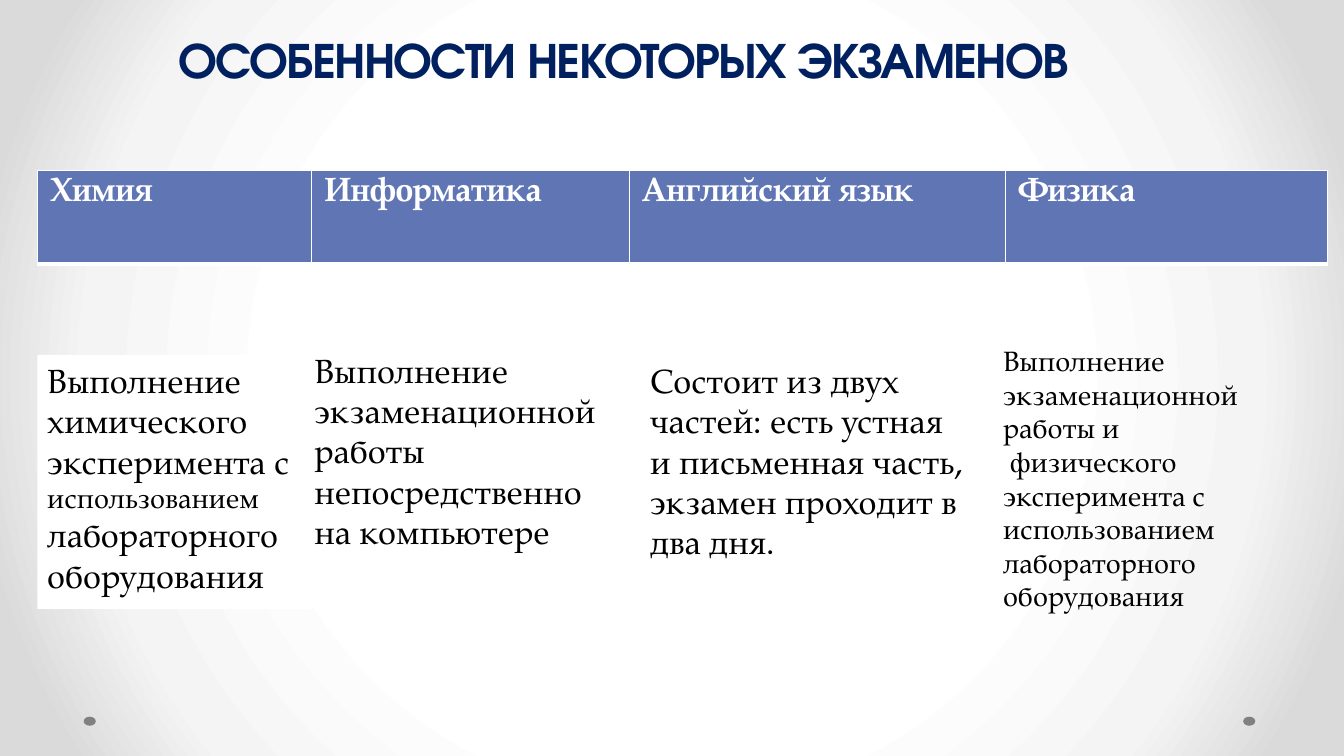
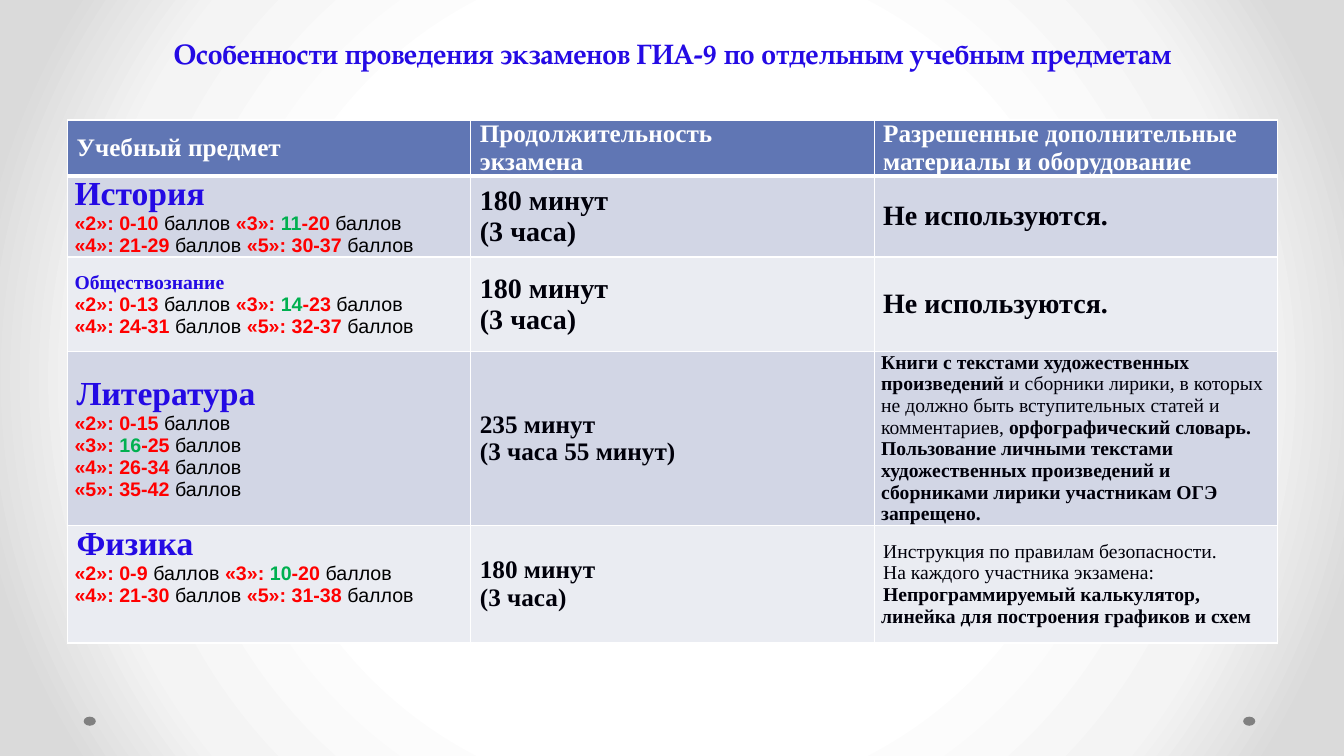
from lxml import etree
from pptx import Presentation
from pptx.dml.color import RGBColor
from pptx.enum.shapes import MSO_SHAPE
from pptx.enum.text import MSO_ANCHOR as ANCHOR, MSO_AUTO_SIZE as AUTO, PP_ALIGN as ALIGN
from pptx.oxml import parse_xml
from pptx.oxml.ns import qn
from pptx.util import Inches, Pt

A_NS = "http://schemas.openxmlformats.org/drawingml/2006/main"
PAGELLA, ADVENTOR = "TeX Gyre Pagella", "TeX Gyre Adventor"
TIMES, ARIAL = "Times New Roman", "Arial"
WHITE, BLACK, INK = "FFFFFF", "000000", "00000A"
NAVY, BLUE, RED, GREEN, GREY = "002060", "240AE4", "FF0000", "00B050", "808080"
HEADER, BANDS = "6076B4", ("D2D6E5", "EAECF2")
GRADIENT = ((50, "FFFFFF"), (76, "F4F4F4"), (92, "DADADA"))

EXAM_COLUMNS = (("Химия", 2.72), ("Информатика", 3.15), ("Английский язык", 3.73), ("Физика", 3.2))
HEADINGS = (
    ["Учебный предмет"],
    ["Продолжительность", "экзамена"],
    ["Разрешенные дополнительные", "материалы и оборудование"],
)
ROW_HEIGHTS = (0.55, 0.8, 0.94, 1.71, 1.17)
UNUSED = [[("Не используются.", 20, True)]]
BOOKS = [
    [("Книги с текстами художественных произведений ", 14, True),
     ("и сборники лирики, в которых не должно быть вступительных статей и комментариев, ", 14, False),
     ("орфографический словарь.", 14, True)],
    [("Пользование личными текстами художественных произведений и сборниками лирики "
      "участникам ОГЭ запрещено.", 14, True)],
]
TOOLS = [
    [("Инструкция по правилам безопасности.", 14, False)],
    [("На каждого участника экзамена:", 14, False)],
    [("Непрограммируемый калькулятор, линейка для построения графиков и схем", 14, True)],
]
SUBJECTS = (
    ("История", 24, ("0-10", "11-20", "21-29", "30-37"), 2, ("180 минут", "(3 часа)"), 20, UNUSED),
    ("Обществознание", 14, ("0-13", "14-23", "24-31", "32-37"), 2, ("180 минут", "(3 часа)"), 20, UNUSED),
    ("Литература", 24, ("0-15", "16-25", "26-34", "35-42"), 1, ("235 минут", "(3 часа 55 минут)"), 18, BOOKS),
    ("Физика", 24, ("0-9", "10-20", "21-30", "31-38"), 2, ("180 минут", "(3 часа)"), 18, TOOLS),
)


def rgb(color):
    return RGBColor.from_string(color)


def set_font(r, size, name, color, bold=False):
    r.font.size = Pt(size)
    r.font.name = name
    r.font.bold = bold
    r.font.color.rgb = rgb(color)


def write(tf, paragraphs, indent=0):
    for i, runs in enumerate(paragraphs):
        p = tf.paragraphs[0] if i == 0 else tf.add_paragraph()
        if indent:
            pPr = p._p.get_or_add_pPr()
            pPr.set("marL", "0")
            pPr.set("indent", str(Inches(indent)))
        for text, *style in runs:
            r = p.add_run()
            r.text = text
            set_font(r, *style)


def style_master(prs, slide):
    master = prs.slide_master
    master.background.fill.solid()
    solid = next(master.element.iter(qn("p:bgPr")))[0]
    stops = "".join(
        f'<a:gs pos="{pos * 1000}"><a:srgbClr val="{color}"/></a:gs>' for pos, color in GRADIENT
    )
    grad = parse_xml(
        f'<a:gradFill xmlns:a="{A_NS}" rotWithShape="1"><a:gsLst>{stops}</a:gsLst>'
        '<a:path path="circle"><a:fillToRect l="50000" t="50000" r="50000" b="50000"/></a:path>'
        "</a:gradFill>"
    )
    solid.getparent().replace(solid, grad)
    for left in (0.83, 12.33):
        dot = slide.shapes.add_shape(
            MSO_SHAPE.OVAL, Inches(left), Inches(7.11), Inches(0.12), Inches(0.09))
        dot.shadow.inherit = False
        dot.fill.solid()
        dot.fill.fore_color.rgb = rgb(GREY)
        dot.line.fill.background()
        master.shapes.element.append(dot.element)


def set_title(slide, text, box, size, font, color, align, anchor, wrap=True):
    title = slide.shapes.title
    title.left, title.top, title.width, title.height = map(Inches, box)
    tf = title.text_frame
    tf.text = text
    tf.auto_size = AUTO.NONE
    tf.word_wrap = wrap
    tf.vertical_anchor = anchor
    p = tf.paragraphs[0]
    p.alignment = align
    set_font(p.runs[0], size, font, color, True)
    return p.runs[0]


def add_note(slide, box, paragraphs, fill=None):
    sp = slide.shapes.add_textbox(*map(Inches, box))
    if fill:
        sp.fill.solid()
        sp.fill.fore_color.rgb = rgb(fill)
    tf = sp.text_frame
    tf.word_wrap = True
    write(tf, [[(text, size, PAGELLA, BLACK) for text, size in runs] for runs in paragraphs])
    return tf


def add_grid(slide, left, top, widths, heights):
    table = slide.shapes.add_table(
        len(heights), len(widths), Inches(left), Inches(top),
        Inches(sum(widths)), Inches(sum(heights))).table
    for column, width in zip(table.columns, widths):
        column.width = Inches(width)
    for row, height in zip(table.rows, heights):
        row.height = Inches(height)
    return table


def fill_cell(cell, paragraphs, fill, margins=(0.07, 0), anchor=ANCHOR.MIDDLE, indent=0, bottom=1):
    cell.margin_left = cell.margin_right = Inches(margins[0])
    cell.margin_top = cell.margin_bottom = Inches(margins[1])
    cell.vertical_anchor = anchor
    cell.fill.solid()
    cell.fill.fore_color.rgb = rgb(fill)
    tcPr = cell._tc.get_or_add_tcPr()
    for i, (side, width) in enumerate((("L", 1), ("R", 1), ("T", 1), ("B", bottom))):
        ln = etree.Element(qn(f"a:ln{side}"), w=str(Pt(width)))
        color = etree.SubElement(etree.SubElement(ln, qn("a:solidFill")), qn("a:srgbClr"))
        color.set("val", WHITE)
        tcPr.insert(i, ln)
    write(cell.text_frame, paragraphs, indent)


def score_runs(mark, points, last):
    low, high = points.split("-")
    if mark == 3:
        parts = ((f"«{mark}»: ", RED), (low, GREEN), (f"-{high}", RED))
    else:
        parts = ((f"«{mark}»: {points}", RED),)
    runs = [(text, 14, ARIAL, color, True) for text, color in parts]
    return runs + [(" баллов" if last else " баллов ", 14, ARIAL, BLACK)]


def score_lines(ranges, per_line):
    marks = list(enumerate(ranges, 2))
    lines = []
    for start in range(0, len(marks), per_line):
        group = marks[start:start + per_line]
        lines.append([run for mark, points in group
                      for run in score_runs(mark, points, mark == group[-1][0])])
    return lines


def build_features(slide):
    add_note(slide, (0.37, 3.52, 2.72, 2.52), [[
        ("Выполнение химического эксперимента с ", 24),
        ("использованием ", 20),
        ("лабораторного оборудования", 24)]], WHITE)
    r = set_title(slide, "ОСОБЕННОСТИ НЕКОТОРЫХ ЭКЗАМЕНОВ", (1.67, 0.23, 9.93, 0.71),
                  36, ADVENTOR, NAVY, ALIGN.LEFT, ANCHOR.TOP, False)
    r._r.get_or_add_rPr().set("spc", "-130")
    add_note(slide, (3.02, 3.42, 3.23, 2.79), [[
        ("Выполнение экзаменационной работы непосредственно на компьютере", 24)]])
    add_note(slide, (6.35, 3.52, 3.36, 2.12), [[
        ("Состоит из двух частей: есть устная и письменная часть, экзамен проходит в два дня.", 24)]])
    physics = add_note(slide, (9.85, 3.36, 3.26, 2.79), [
        [("Выполнение экзаменационной работы и", 20)],
        [("физического эксперимента с использованием лабораторного оборудования", 20)]])
    physics.paragraphs[1]._p.get_or_add_pPr().set("indent", str(Inches(0.07)))
    table = add_grid(slide, 0.37, 1.69, [width for _, width in EXAM_COLUMNS], [0.93])
    for cell, (name, _) in zip(table.rows[0].cells, EXAM_COLUMNS):
        fill_cell(cell, [[(name, 24, PAGELLA, WHITE, True)]], HEADER,
                  (0.13, 0.07), ANCHOR.TOP, bottom=3)


def build_subjects(slide):
    set_title(slide, "Особенности проведения экзаменов ГИА-9 по отдельным учебным предметам",
              (0.67, 0, 12, 0.75), 20, PAGELLA, BLUE, ALIGN.CENTER, ANCHOR.BOTTOM)
    table = add_grid(slide, 0.67, 1.19, [4] * 3, ROW_HEIGHTS)
    for cell, lines in zip(table.rows[0].cells, HEADINGS):
        fill_cell(cell, [[(line, 18, TIMES, WHITE, True)] for line in lines],
                  HEADER, indent=0.02, bottom=3)
    for i, (name, size, ranges, per_line, duration, time_size, aids) in enumerate(SUBJECTS):
        subject, time, materials = table.rows[i + 1].cells
        band = BANDS[i % 2]
        fill_cell(subject, [[(name, size, TIMES, BLUE, True)]] + score_lines(ranges, per_line), band,
                  anchor=ANCHOR.TOP if name == "Физика" else ANCHOR.MIDDLE)
        if name in ("Литература", "Физика"):
            subject.text_frame.paragraphs[0]._p.get_or_add_pPr().set("indent", str(Inches(0.02)))
        fill_cell(time, [[(line, time_size, TIMES, INK, True)] for line in duration], band, indent=0.02)
        fill_cell(materials,
                  [[(text, pt, TIMES, INK, bold) for text, pt, bold in runs] for runs in aids],
                  band, indent=0 if aids is BOOKS else 0.02)


def main():
    prs = Presentation()
    prs.slide_width, prs.slide_height = Inches(13.33), Inches(7.5)
    layout = prs.slide_layouts[5]
    features = prs.slides.add_slide(layout)
    style_master(prs, features)
    build_features(features)
    build_subjects(prs.slides.add_slide(layout))
    prs.save("out.pptx")


if __name__ == "__main__":
    main()
